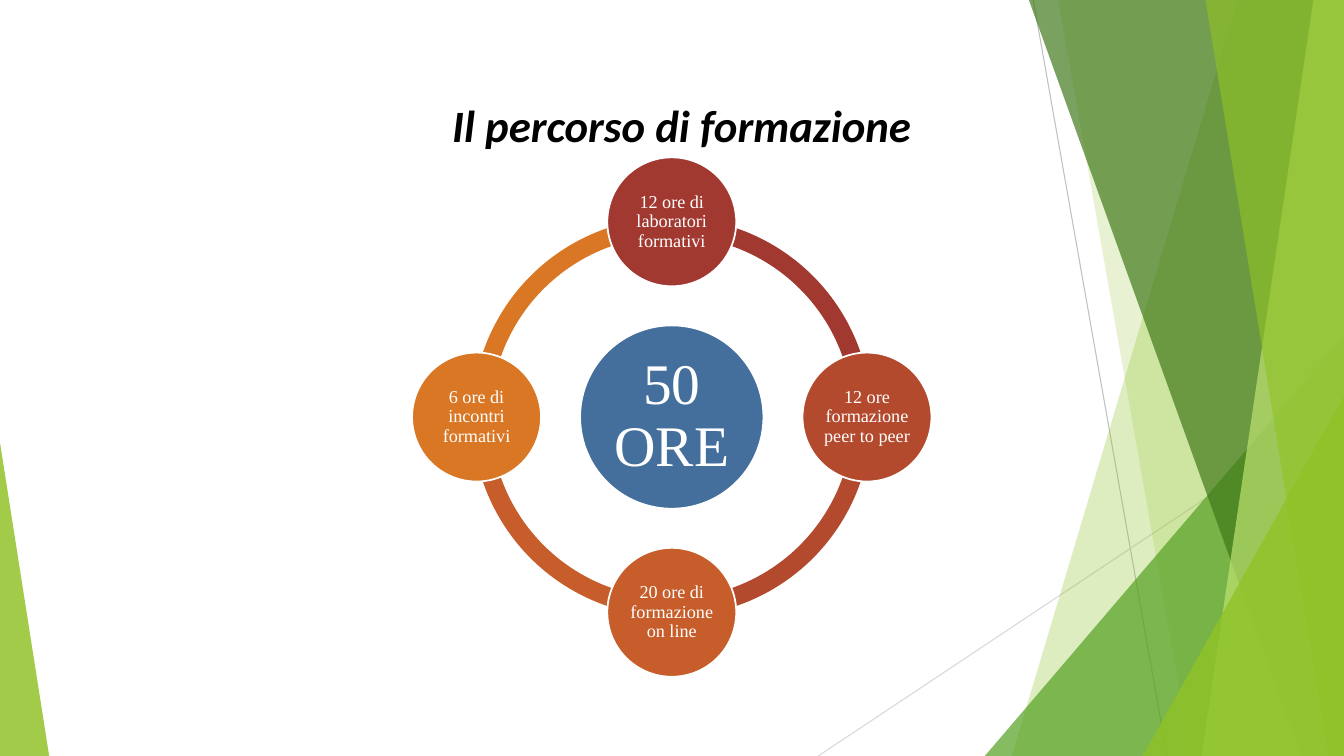
from lxml.etree import SubElement
from pptx import Presentation
from pptx.dml.color import RGBColor
from pptx.enum.shapes import MSO_CONNECTOR, MSO_SHAPE
from pptx.enum.text import MSO_ANCHOR, PP_ALIGN
from pptx.oxml.ns import qn
from pptx.util import Cm, Pt

WIDTH, HEIGHT = 33.87, 19.05
CENTER_X, CENTER_Y = 16.93, 10.51
RING_SIZE, ORBIT_RADIUS = 10.06, 4.92
HUB_SIZE, STEP_SIZE = 4.62, 3.25
WHITE = "FFFFFF"

# Clockwise from the top: text, colour, direction from the centre
STEPS = [
    ("12 ore di laboratori formativi", "A23930", (0, -1)),
    ("12 ore formazione peer to peer", "B3492D", (1, 0)),
    ("20 ore di formazione on line", "C65D2A", (0, 1)),
    ("6 ore di incontri formativi", "D97725", (-1, 0)),
]


def color(hex_text):
    return RGBColor.from_string(hex_text)


def paint(shape, fill, opacity=100):
    shape.shadow.inherit = False
    shape.fill.solid()
    shape.fill.fore_color.rgb = color(fill)
    shape.line.fill.background()
    if opacity < 100:
        tint = shape.fill._xPr.find(qn("a:solidFill"))[0]
        SubElement(tint, qn("a:alpha"), val=str(opacity * 1000))


def add_thin_line(page, x1, y1, x2, y2, hex_text):
    line = page.shapes.add_connector(
        MSO_CONNECTOR.STRAIGHT, Cm(x1), Cm(y1), Cm(x2), Cm(y2))
    line.line.color.rgb = color(hex_text)
    line.line.width = Pt(0.75)
    SubElement(line._element.spPr, qn("a:effectLst"))


def add_facet(page, top_x, bottom_x, fill, opacity):
    """Full-height band from a slanted left edge to the right slide edge."""
    builder = page.shapes.build_freeform(Cm(top_x), 0)
    corners = [(WIDTH, 0), (WIDTH, HEIGHT), (bottom_x, HEIGHT)]
    builder.add_line_segments([(Cm(x), Cm(y)) for x, y in corners])
    paint(builder.convert_to_shape(), fill, opacity)


def add_corner(page, left, top, width, apex, fill, opacity):
    """Triangle standing on the bottom slide edge."""
    corner = page.shapes.add_shape(
        MSO_SHAPE.ISOSCELES_TRIANGLE,
        Cm(left), Cm(top), Cm(width), Cm(HEIGHT - top))
    corner.adjustments[0] = apex
    paint(corner, fill, opacity)


def add_centered(page, kind, x, y, size, fill):
    shape = page.shapes.add_shape(
        kind, Cm(x - size / 2), Cm(y - size / 2), Cm(size), Cm(size))
    paint(shape, fill)
    return shape


def add_arc(page, start, fill):
    """Quarter of the ring; angles are in units of 5/3 degree."""
    arc = add_centered(page, MSO_SHAPE.BLOCK_ARC, CENTER_X, CENTER_Y, RING_SIZE, fill)
    for index, value in enumerate((start, (start + 54) % 216, 0.046)):
        arc.adjustments[index] = value


def write(frame, text, size, font, hex_text):
    frame.word_wrap = True
    para = frame.paragraphs[0]
    para.alignment = PP_ALIGN.CENTER
    span = para.add_run()
    span.text = text
    span.font.size = Pt(size)
    span.font.name = font
    span.font.color.rgb = color(hex_text)
    return para, span


def add_circle(page, x, y, size, fill, text, text_size, inset):
    circle = add_centered(page, MSO_SHAPE.OVAL, x, y, size, fill)
    circle.line.color.rgb = color(WHITE)
    circle.line.width = Pt(1.25)
    frame = circle.text_frame
    frame.vertical_anchor = MSO_ANCHOR.MIDDLE
    frame.margin_left = frame.margin_right = Cm(inset)
    frame.margin_top = frame.margin_bottom = Cm(inset)
    para, _ = write(frame, text, text_size, "Times New Roman", WHITE)
    para.line_spacing = 0.9


def add_title(page, text):
    box = page.shapes.add_textbox(Cm(8.51), Cm(2.34), Cm(17.35), Cm(1.63))
    _, span = write(box.text_frame, text, 32, "Calibri", "000000")
    span.font.bold = span.font.italic = True


def add_backdrop(page):
    add_thin_line(page, 26.04, 0, 29.41, HEIGHT, "BFBFBF")
    add_thin_line(page, WIDTH, 10.24, 20.62, HEIGHT, "D8D8D8")
    add_facet(page, 31.19, 25.5, "90C226", 29)
    add_facet(page, 26.67, 30.02, "90C226", 20)
    add_corner(page, 24.82, 8.46, 9.05, 1, "54A021", 71)
    add_facet(page, 25.93, 32.79, "3F7818", 69)
    add_facet(page, 33.1, 30.28, "BFE471", 69)
    add_facet(page, 30.38, 33.48, "90C226", 64)
    add_corner(page, 28.8, 9.98, 5.07, 1, "90C226", 80)
    add_corner(page, 0, 11.15, 1.24, 0, "90C226", 84)


def add_cycle(page):
    # Each arc leads clockwise from its step to the next one
    for index, (_, fill, _) in reversed(list(enumerate(STEPS))):
        add_arc(page, (162 + 54 * index) % 216, fill)
    add_circle(page, CENTER_X, CENTER_Y, HUB_SIZE, "446E9C", "50 ORE", 41, 0.15)
    for text, fill, (dx, dy) in STEPS:
        add_circle(page, CENTER_X + dx * ORBIT_RADIUS, CENTER_Y + dy * ORBIT_RADIUS,
                   STEP_SIZE, fill, text, 13, 0.05)


def main():
    deck = Presentation()
    deck.slide_width, deck.slide_height = Cm(WIDTH), Cm(HEIGHT)
    page = deck.slides.add_slide(deck.slide_layouts[6])
    add_backdrop(page)
    add_title(page, "Il percorso di formazione")
    add_cycle(page)
    deck.save("out.pptx")


if __name__ == "__main__":
    main()
